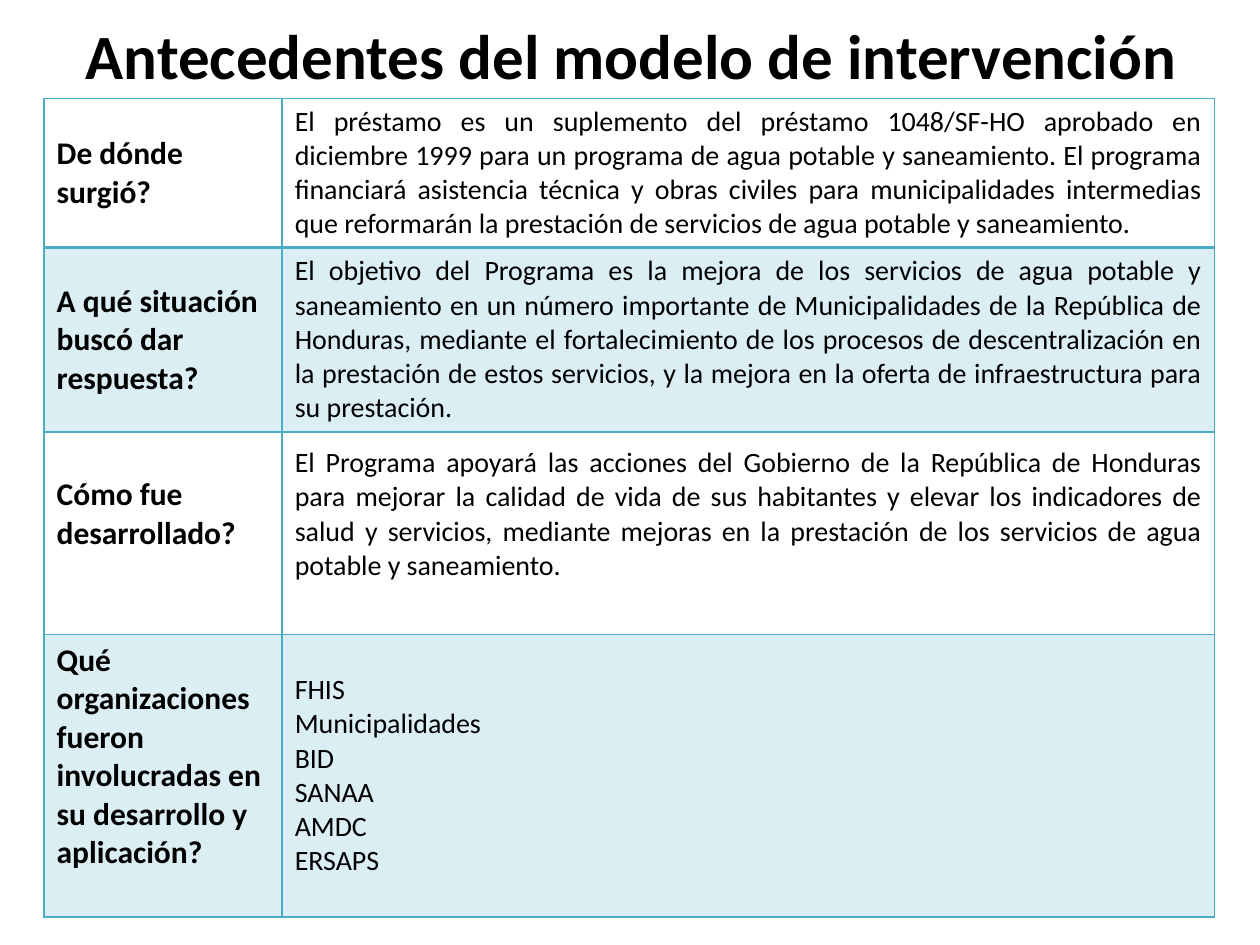
from lxml.etree import SubElement
from pptx import Presentation
from pptx.dml.color import RGBColor
from pptx.enum.text import MSO_ANCHOR as Anchor, PP_ALIGN as Align
from pptx.oxml.ns import qn
from pptx.util import Inches, Pt

FONT = "Calibri"
BLACK = RGBColor(0x00, 0x00, 0x00)
WHITE = RGBColor(0xFF, 0xFF, 0xFF)
TEAL = RGBColor(0x4B, 0xAC, 0xC6)
PALE_TEAL = RGBColor(0xDB, 0xEE, 0xF4)

TITLE = "Antecedentes del modelo de intervención"
COLUMN_WIDTHS = (1.89, 7.4)
MARGIN = 0.05
RAISED = 0.35

ROWS = [
    {"height": 1.18, "bottoms": (MARGIN, MARGIN),
     "question": "De dónde surgió?",
     "answer": ["El préstamo es un suplemento del préstamo 1048/SF-HO aprobado en "
                "diciembre 1999 para un programa de agua potable y saneamiento. "
                "El programa financiará asistencia técnica y obras civiles para "
                "municipalidades intermedias que reformarán la prestación de "
                "servicios de agua potable y saneamiento."]},
    {"height": 1.46, "bottoms": (MARGIN, MARGIN),
     "question": "A qué situación buscó dar respuesta?",
     "answer": ["El objetivo del Programa es la mejora de los servicios de agua "
                "potable y saneamiento en un número importante de Municipalidades "
                "de la República de Honduras, mediante el fortalecimiento de los "
                "procesos de descentralización en la prestación de estos servicios, "
                "y la mejora en la oferta de infraestructura para su prestación."]},
    {"height": 1.61, "bottoms": (RAISED, RAISED),
     "question": "Cómo fue desarrollado?",
     "answer": ["El Programa apoyará las acciones del Gobierno de la República de "
                "Honduras para mejorar la calidad de vida de sus habitantes y elevar "
                "los indicadores de salud y servicios, mediante mejoras en la "
                "prestación de los servicios de agua potable y saneamiento."]},
    {"height": 2.24, "bottoms": (RAISED, MARGIN),
     "question": "Qué organizaciones fueron involucradas en su desarrollo y aplicación?",
     "answer": ["FHIS", "Municipalidades", "BID", "SANAA", "AMDC", "ERSAPS"]},
]


def write(frame, lines, size, bold, align):
    frame.text = "\n".join(lines)
    for para in frame.paragraphs:
        para.alignment = align
        para.font.name = FONT
        para.font.size = Pt(size)
        para.font.bold = bold
        para.font.color.rgb = BLACK


def add_borders(cell, widths):
    properties = cell._tc.get_or_add_tcPr()
    for side, width in widths.items():
        line = SubElement(properties, qn(f"a:ln{side}"), w=str(Pt(width)))
        fill = SubElement(line, qn("a:solidFill"))
        SubElement(fill, qn("a:srgbClr"), val=str(TEAL))


def add_title(page):
    title = page.shapes.title
    title.left, title.top = Inches(0.51), Inches(-0.19)
    title.width, title.height = Inches(9), Inches(1.25)
    title.text_frame.vertical_anchor = Anchor.MIDDLE
    write(title.text_frame, [TITLE], 36, True, Align.CENTER)


def add_questions(page):
    height = sum(row["height"] for row in ROWS)
    table = page.shapes.add_table(
        len(ROWS), len(COLUMN_WIDTHS), Inches(0.35), Inches(0.78),
        Inches(sum(COLUMN_WIDTHS)), Inches(height)).table
    table.first_row = table.horz_banding = False
    for column, width in zip(table.columns, COLUMN_WIDTHS):
        column.width = Inches(width)
    for index, row in enumerate(ROWS):
        table.rows[index].height = Inches(row["height"])
        question, answer = table.rows[index].cells
        write(question.text_frame, [row["question"]], 18, True, Align.LEFT)
        write(answer.text_frame, row["answer"], 16, False, Align.JUSTIFY)
        widths = {"L": 1, "R": 1, "T": 2 if index == 1 else 1,
                  "B": 2 if index == 0 else 1}
        for cell, bottom in zip((question, answer), row["bottoms"]):
            cell.vertical_anchor = Anchor.MIDDLE
            cell.margin_bottom = Inches(bottom)
            add_borders(cell, widths)
            cell.fill.solid()
            cell.fill.fore_color.rgb = PALE_TEAL if index % 2 else WHITE


def main():
    deck = Presentation()
    deck.slide_width, deck.slide_height = Inches(10), Inches(7.5)
    page = deck.slides.add_slide(deck.slide_layouts[5])
    add_title(page)
    add_questions(page)
    deck.save("out.pptx")


if __name__ == "__main__":
    main()
